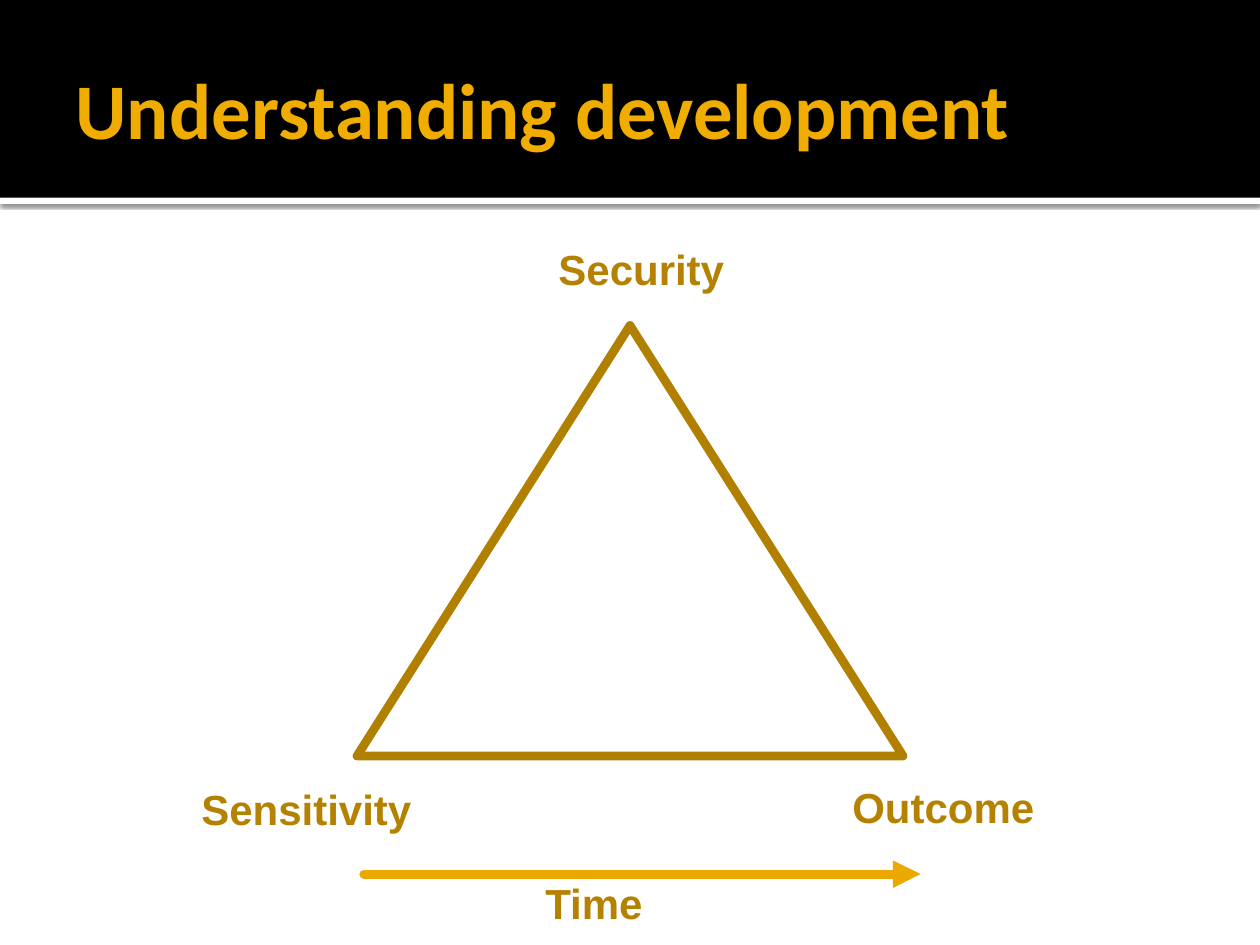
"""Build the "Understanding development" slide with a labelled triangle and a time arrow."""
import lxml.etree
import pptx
import pptx.dml.color
import pptx.enum.shapes
import pptx.enum.text
import pptx.oxml
import pptx.oxml.ns
import pptx.util

Pt = pptx.util.Pt
RGB = pptx.dml.color.RGBColor
MSO = pptx.enum.shapes.MSO_SHAPE
BLACK = RGB(0x00, 0x00, 0x00)
WHITE = RGB(0xFF, 0xFF, 0xFF)
GOLD = RGB(0xF0, 0xAD, 0x00)
LABEL = RGB(0xB4, 0x82, 0x00)
EDGE = RGB(0xB2, 0x80, 0x00)
ARROW = RGB(0xEB, 0xA9, 0x00)
NS = 'xmlns:a="http://schemas.openxmlformats.org/drawingml/2006/main"'
SHADOW = (f'<a:effectLst {NS}><a:outerShdw blurRad="{Pt(2.5)}" dist="{Pt(0.8)}" dir="5400000">'
          '<a:srgbClr val="000000"><a:alpha val="60000"/></a:srgbClr>'
          '</a:outerShdw></a:effectLst>')


def set_font(r, size, name, color):
    for key, value in {"size": Pt(size), "name": name, "bold": True}.items():
        setattr(r.font, key, value)
    r.font.color.rgb = color


def set_line(sp, color, width):
    sp.line.color.rgb = color
    sp.line.width = Pt(width)
    ln = sp.line._get_or_add_ln()
    ln.set("cap", "rnd")
    lxml.etree.SubElement(ln, pptx.oxml.ns.qn("a:round"))
    return ln


prs = pptx.Presentation()
prs.slide_width, prs.slide_height = Pt(720), Pt(540)
s = prs.slides.add_slide(prs.slide_layouts[5])

for top, height, color in [(113, 3.6, WHITE), (0, 113, BLACK)]:
    sp = s.shapes.add_shape(MSO.RECTANGLE, 0, Pt(top), Pt(720), Pt(height))
    sp.fill.solid()
    sp.fill.fore_color.rgb = color
    sp.line.fill.background()
    if color == WHITE:
        sp._element.spPr.append(pptx.oxml.parse_xml(SHADOW))
    else:
        sp.shadow.inherit = False

title = s.shapes.title
s.shapes._spTree.append(title._element)
for key, value in {"left": 36, "top": 12.24, "width": 648, "height": 98.64}.items():
    setattr(title, key, Pt(value))
tf = title.text_frame
for key, value in {"margin_left": Pt(7.2), "margin_right": Pt(3.6), "margin_top": Pt(3.6),
                   "margin_bottom": Pt(3.6), "word_wrap": True,
                   "auto_size": pptx.enum.text.MSO_AUTO_SIZE.NONE,
                   "vertical_anchor": pptx.enum.text.MSO_ANCHOR.MIDDLE}.items():
    setattr(tf, key, value)
p = tf.paragraphs[0]
p.alignment = pptx.enum.text.PP_ALIGN.LEFT
r = p.add_run()
r.text = "Understanding development"
set_font(r, 45, "Calibri", GOLD)

triangle = s.shapes.add_shape(MSO.ISOSCELES_TRIANGLE, Pt(204), Pt(186), Pt(312), Pt(246))
triangle.fill.background()
triangle.shadow.inherit = False
set_line(triangle, EDGE, 5)

arrow = s.shapes.add_connector(pptx.enum.shapes.MSO_CONNECTOR.STRAIGHT,
                               Pt(208), Pt(499.5), Pt(526), Pt(499.5))
ln = set_line(arrow, ARROW, 5.25)
lxml.etree.SubElement(ln, pptx.oxml.ns.qn("a:tailEnd"), type="triangle")
lxml.etree.SubElement(arrow._element.spPr, pptx.oxml.ns.qn("a:effectLst"))

for text, left, top, width in [("Security", 312, 135.5, 110), ("Sensitivity", 108, 444, 135.5),
                               ("Outcome", 480, 443, 119.5), ("Time", 304.5, 498, 70.5)]:
    tb = s.shapes.add_textbox(Pt(left), Pt(top), Pt(width), Pt(36))
    tf = tb.text_frame
    tf.word_wrap = False
    tf.auto_size = pptx.enum.text.MSO_AUTO_SIZE.SHAPE_TO_FIT_TEXT
    r = tf.paragraphs[0].add_run()
    r.text = text
    set_font(r, 24, "Arial", LABEL)

prs.save("out.pptx")
